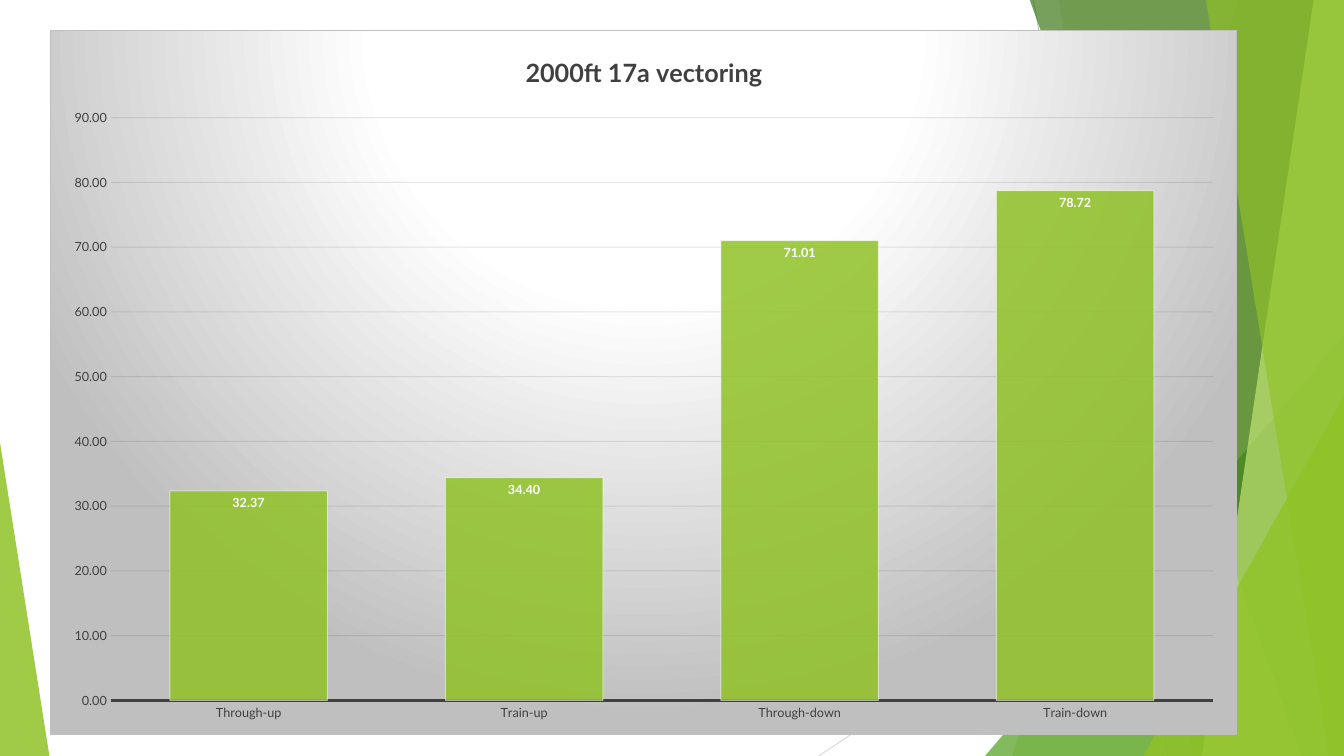
from lxml import etree
from pptx import Presentation, util as u
from pptx.chart.data import CategoryChartData
from pptx.dml.color import RGBColor
from pptx.enum import chart as ch, shapes
from pptx.oxml import parse_xml
from pptx.oxml.ns import nsdecls, qn

PX = 9144  # EMU in one px, 100 px to the inch
W, H = 1333, 750
FONT = "Lato"
GREEN, DARK, GREY, WHITE = "90C226", "404040", "BFBFBF", "FFFFFF"


def px(n):
    return u.Emu(n * PX)


def rgb(value):
    return RGBColor.from_string(value)


def paint(fill, color, opacity=100):
    fill.solid()
    fill.fore_color.rgb = rgb(color)
    if opacity < 100:
        clr = fill._xPr.find(qn("a:solidFill"))[0]
        etree.SubElement(clr, qn("a:alpha")).set("val", str(opacity * 1000))


def stroke(line, color, width, opacity=100):
    paint(line.fill, color, opacity)
    line.width = u.Pt(width)


def style(font, size, color, bold=False):
    font.name, font.size, font.bold = FONT, u.Pt(size), bold
    font.color.rgb = rgb(color)


def add_line(s, x1, y1, x2, y2, color):
    c = s.shapes.add_connector(shapes.MSO_CONNECTOR.STRAIGHT,
                               px(x1), px(y1), px(x2), px(y2))
    stroke(c.line, color, 0.75)
    etree.SubElement(c._element.spPr, qn("a:effectLst"))


def finish(sp, color, opacity):
    sp.shadow.inherit = False
    paint(sp.fill, color, opacity)
    sp.line.fill.background()


def add_pane(s, top_x, bottom_x, color, opacity):
    """Full-height pane with a slanted left edge, ending at the right side."""
    fb = s.shapes.build_freeform(top_x, -1, scale=PX)
    fb.add_line_segments([(W, -1), (W, H), (bottom_x, H)], close=True)
    finish(fb.convert_to_shape(), color, opacity)


def add_triangle(s, x, w, h, apex, color, opacity):
    """Triangle standing on the bottom edge; apex 0 is left, 1 is right."""
    sp = s.shapes.add_shape(shapes.MSO_SHAPE.ISOSCELES_TRIANGLE,
                            px(x), px(H - h), px(w), px(h))
    sp.adjustments[0] = apex
    finish(sp, color, opacity)


def add_backdrop(s):
    add_line(s, 1025, 0, 1158, H, GREY)
    add_line(s, W, 403, 812, H, "D9D9D9")
    add_pane(s, 1228, 1004, GREEN, 30)
    add_pane(s, 1050, 1183, GREEN, 20)
    add_triangle(s, 977, 356, 417, 1, "54A021", 72)
    add_pane(s, 1021, 1291, "3F7819", 70)
    add_pane(s, 1303, 1192, "C0E474", 70)
    add_pane(s, 1196, 1318, GREEN, 65)
    add_triangle(s, 1134, 199, 357, 1, GREEN, 80)
    add_triangle(s, 0, 49, 311, 0, GREEN, 85)


def fill_chart_area(chart):
    stops = "".join(
        f'<a:gs pos="{pos * 1000}"><a:srgbClr val="{color}"/></a:gs>'
        for pos, color in [(0, WHITE), (39, WHITE), (100, GREY)])
    area = parse_xml(
        f'<c:spPr {nsdecls("c", "a")}><a:gradFill><a:gsLst>{stops}</a:gsLst>'
        '<a:path path="circle"><a:fillToRect l="50000" t="-80000" r="50000" '
        'b="180000"/></a:path></a:gradFill><a:ln w="9525"><a:solidFill>'
        f'<a:srgbClr val="{GREY}"/></a:solidFill></a:ln></c:spPr>')
    chart._chartSpace.find(qn("c:chart")).addnext(area)


def style_axes(chart):
    for axis in (chart.category_axis, chart.value_axis):
        axis.major_tick_mark = axis.minor_tick_mark = ch.XL_TICK_MARK.NONE
        style(axis.tick_labels.font, 9, DARK)
    stroke(chart.category_axis.format.line, DARK, 1.5)
    val = chart.value_axis
    val.minimum_scale, val.maximum_scale, val.major_unit = 0, 90, 10
    val.tick_labels.number_format = "0.00"
    val.tick_labels.number_format_is_linked = False
    val.format.line.fill.background()
    stroke(val.major_gridlines.format.line, "0D0D0D", 0.75, 10)


def style_bars(plot):
    plot.gap_width, plot.overlap, plot.vary_by_categories = 75, 40, False
    bars = plot.series[0]
    paint(bars.format.fill, GREEN, 85)
    stroke(bars.format.line, WHITE, 0.75, 50)
    labels = bars.data_labels
    labels.show_value = True
    labels.position = ch.XL_LABEL_POSITION.INSIDE_END
    labels.number_format, labels.number_format_is_linked = "0.00", False
    style(labels.font, 9, WHITE, True)


def add_bar_chart(s, x, y, w, h, title, values):
    data = CategoryChartData(number_format="0.00")
    data.categories = list(values)
    data.add_series("Series 1", list(values.values()))
    chart = s.shapes.add_chart(ch.XL_CHART_TYPE.COLUMN_CLUSTERED,
                               px(x), px(y), px(w), px(h), data).chart
    chart.has_legend = False
    style(chart.font, 10, "000000")
    chart.has_title = True
    r = chart.chart_title.text_frame.paragraphs[0].add_run()
    r.text = title
    style(r.font, 18, DARK, True)
    chart.chart_title.include_in_layout = False
    fill_chart_area(chart)
    style_axes(chart)
    style_bars(chart.plots[0])


def main():
    prs = Presentation()
    prs.slide_width, prs.slide_height = px(W), px(H)
    s = prs.slides.add_slide(prs.slide_layouts[6])

    # Green facets behind the chart
    add_backdrop(s)

    # Chart of vectoring results
    add_bar_chart(s, 50, 30, 1177, 699, "2000ft 17a vectoring",
                  {"Through-up": 32.37, "Train-up": 34.40,
                   "Through-down": 71.01, "Train-down": 78.72})
    prs.save("out.pptx")


if __name__ == "__main__":
    main()
